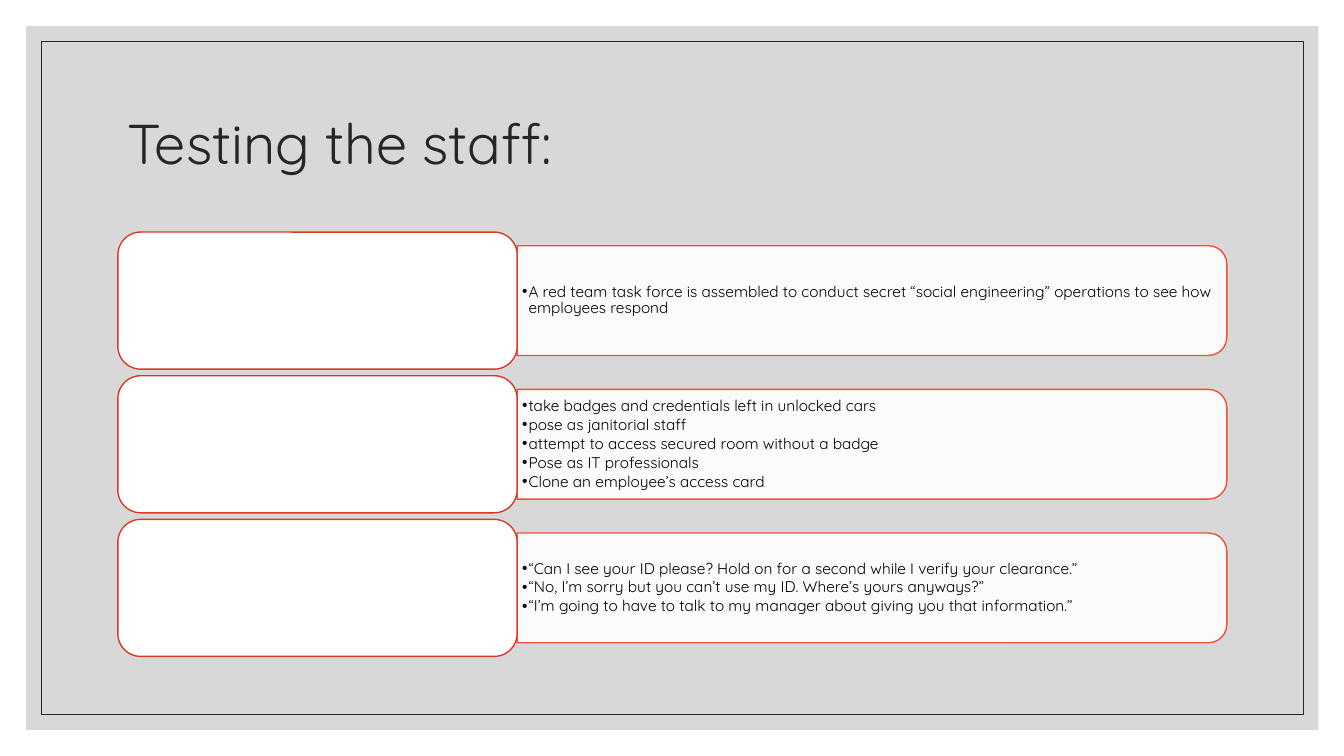
from lxml.etree import SubElement
from pptx import Presentation
from pptx.dml.color import RGBColor
from pptx.enum.shapes import MSO_SHAPE
from pptx.enum.text import MSO_ANCHOR, MSO_AUTO_SIZE, PP_ALIGN
from pptx.oxml.ns import qn
from pptx.util import Pt

COLORS = {"panel": "BFBFBF", "ink": "262626", "white": "FFFFFF",
          "bar_line": "F03F2B", "card_line": "DA3927", "text": "000000"}
ROWS = [
    ["A red team task force is assembled to conduct secret “social engineering” operations to see how employees respond"],
    ["take badges and credentials left in unlocked cars",
     "pose as janitorial staff",
     "attempt to access secured room without a badge",
     "Pose as IT professionals",
     "Clone an employee’s access card"],
    ["“Can I see your ID please? Hold on for a second while I verify your clearance.”",
     "“No, I’m sorry but you can’t use my ID. Where’s yours anyways?”",
     "“I’m going to have to talk to my manager about giving you that information.”"],
]
ROW_TOP, ROW_STEP, CARD_H = 165.8, 102.6, 97.9
CARD_X, CARD_W = 84.2, 285.2
BAR_X, BAR_W, BAR_H = 369.4, 506.9, 78.4
LIST_W, LIST_H = 503.1, 70.6


class SlideBuilder:
    """Holds the slide style and adds each kind of element to the current slide."""

    def __init__(self, s, font="Quicksand"):
        self.s, self.font = s, font

    def shape(self, kind, x, y, w, h, fill=None, line=None, width=1, alpha=100, rotation=0):
        sp = self.s.shapes.add_shape(kind, Pt(x), Pt(y), Pt(w), Pt(h))
        sp.shadow.inherit = False
        sp.rotation = rotation
        if line:
            sp.line.color.rgb = RGBColor.from_string(COLORS[line])
            sp.line.width = Pt(width)
        else:
            sp.line.fill.background()
        if fill:
            sp.fill.solid()
            sp.fill.fore_color.rgb = RGBColor.from_string(COLORS[fill])
        else:
            sp.fill.background()
        if alpha < 100:
            for clr in sp.element.spPr.iter(qn("a:srgbClr")):
                SubElement(clr, qn("a:alpha"), val=str(alpha * 1000))

    def place(self, sp, x, y, w, h):
        sp.left, sp.top, sp.width, sp.height = Pt(x), Pt(y), Pt(w), Pt(h)
        sp.element.getparent().append(sp.element)
        tf = sp.text_frame
        tf.word_wrap = True
        tf.auto_size = MSO_AUTO_SIZE.NONE
        tf.vertical_anchor = MSO_ANCHOR.MIDDLE
        return tf

    def run(self, p, text, size, color):
        p.alignment = PP_ALIGN.LEFT
        p.line_spacing = 0.9
        p.space_before = Pt(0)
        r = p.add_run()
        r.text = text
        r.font.name, r.font.size, r.font.bold = self.font, Pt(size), False
        r.font.color.rgb = RGBColor.from_string(COLORS[color])

    def title(self, text, x, y, w, h):
        tf = self.place(self.s.shapes.title, x, y, w, h)
        self.run(tf.paragraphs[0], text, 40, "ink")

    def bullets(self, sp, items, x, y, w, h):
        tf = self.place(sp, x, y, w, h)
        tf.margin_left = tf.margin_right = Pt(3.6)
        tf.margin_top = tf.margin_bottom = Pt(1.4)
        for i, item in enumerate(items):
            p = tf.add_paragraph() if i else tf.paragraphs[0]
            p.level = 1
            self.run(p, item, 11, "text")
            p.space_after = Pt(1.65)
            pPr = p._p.get_or_add_pPr()
            pPr.set("marL", str(Pt(4.5)))
            pPr.set("indent", str(-Pt(4.5)))
            SubElement(pPr, qn("a:buChar"), char="•")


def main():
    prs = Presentation()
    prs.slide_width, prs.slide_height = Pt(960), Pt(540)
    s = prs.slides.add_slide(prs.slide_layouts[4])
    b = SlideBuilder(s)
    *lists, spare = [sp for sp in s.placeholders if sp.placeholder_format.idx > 0]
    spare.element.getparent().remove(spare.element)

    b.shape(MSO_SHAPE.RECTANGLE, 18.7, 18.7, 923, 502.6, fill="panel", alpha=60)
    b.shape(MSO_SHAPE.RECTANGLE, 29.5, 29.5, 901.4, 481, line="ink", width=0.5)
    b.title("Testing the staff:", 84.2, 50.4, 792, 108)

    for i, (sp, items) in enumerate(zip(lists, ROWS)):
        top = ROW_TOP + i * ROW_STEP
        mid = top + CARD_H / 2
        b.shape(MSO_SHAPE.ROUND_2_SAME_RECTANGLE, BAR_X + (BAR_W - BAR_H) / 2, mid - BAR_W / 2,
                BAR_H, BAR_W, fill="white", line="bar_line", alpha=90, rotation=90)
        b.bullets(sp, items, BAR_X, mid - LIST_H / 2, LIST_W, LIST_H)
        b.shape(MSO_SHAPE.ROUNDED_RECTANGLE, CARD_X, top, CARD_W, CARD_H,
                fill="white", line="card_line")
    prs.save("out.pptx")


if __name__ == "__main__":
    main()
